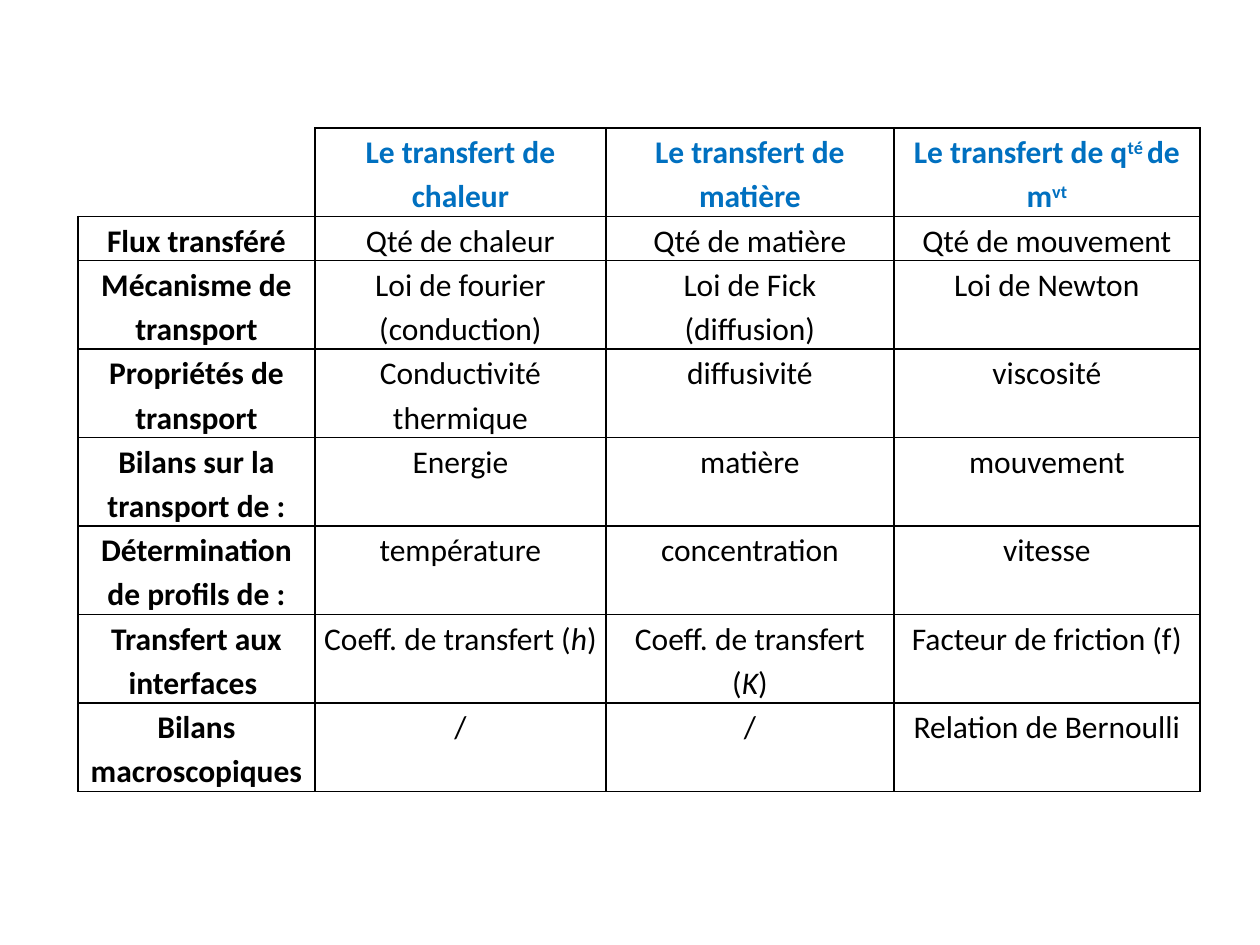
from dataclasses import dataclass

from pptx import Presentation
from pptx import util as u
from pptx.dml import color
from pptx.enum import text
from pptx.oxml import parse_xml
from pptx.oxml import ns

PX_PER_INCH = 126
BLANK_LAYOUT = 6


@dataclass(frozen=True)
class Theme:
    font: str = "Calibri"
    size: int = 18
    ink: str = "000000"
    heading: str = "0070C0"
    line_spacing: float = 1.15
    border_pt: int = 1
    cell_inset: int = 9


def px(length):
    return u.Emu(round(length * u.Inches(1) / PX_PER_INCH))


def add_span(para, words, *, theme, ink, bold=False, italic=False, raised=False):
    span = para.add_run()
    span.text = words
    font = span.font
    font.name, font.size = theme.font, u.Pt(theme.size)
    font.bold, font.italic = bold, italic
    font.color.rgb = color.RGBColor.from_string(ink)
    if raised:
        span._r.get_or_add_rPr().set("baseline", "30000")


class PageBuilder:
    def __init__(self, page, theme):
        self.page = page
        self.theme = theme

    def table(self, left, top, height, columns, row_heights, rows):
        """Draw rows of cells; the first row and first column are headings."""
        frame = self.page.shapes.add_table(
            len(rows), len(columns), px(left), px(top), px(sum(columns)), px(height))
        grid = frame.table
        grid.first_row = grid.horz_banding = False
        for column, width in zip(grid.columns, columns):
            column.width = px(width)
        for row, row_height in zip(grid.rows, row_heights):
            row.height = px(row_height)
        frame.height = px(height)
        for r, row in enumerate(rows):
            for c, content in enumerate(row):
                cell = grid.cell(r, c)
                self.cell(cell, content, bold=r == 0 or c == 0,
                          ink=self.theme.heading if r == 0 else self.theme.ink)
                self.borders(cell, "LRTB" if content else "RB")

    def cell(self, cell, content, **style):
        """Fill a cell with a string or a list of (words, format) spans."""
        cell.fill.background()
        cell.margin_left = cell.margin_right = px(self.theme.cell_inset)
        cell.margin_top = cell.margin_bottom = 0
        para = cell.text_frame.paragraphs[0]
        para.alignment = text.PP_ALIGN.CENTER
        para.line_spacing = self.theme.line_spacing
        spans = [(content, {})] if isinstance(content, str) else content
        for words, extra in spans:
            if words:
                add_span(para, words, theme=self.theme, **style, **extra)

    def borders(self, cell, visible):
        properties = cell._tc.get_or_add_tcPr()
        solid = f'<a:solidFill><a:srgbClr val="{self.theme.ink}"/></a:solidFill>'
        width = u.Pt(self.theme.border_pt)
        for position, side in enumerate("LRTB"):
            paint = solid if side in visible else "<a:noFill/>"
            properties.insert(position, parse_xml(
                f'<a:ln{side} {ns.nsdecls("a")} w="{width}">{paint}</a:ln{side}>'))


RAISED = {"raised": True}
ITALIC = {"italic": True}


def coefficient(symbol):
    return [("Coeff. de transfert (", {}), (symbol, ITALIC), (")", {})]


ROWS = [
    ["", "Le transfert de chaleur", "Le transfert de matière",
     [("Le transfert de q", {}), ("té ", RAISED), ("de m", {}), ("vt", RAISED)]],
    ["Flux transféré", "Qté de chaleur", "Qté de matière", "Qté de mouvement"],
    ["Mécanisme de transport", "Loi de fourier (conduction)",
     "Loi de Fick (diffusion)", "Loi de Newton"],
    ["Propriétés de transport", "Conductivité thermique", "diffusivité", "viscosité"],
    ["Bilans sur la transport de :", "Energie", "matière", "mouvement"],
    ["Détermination de profils de :", "température", "concentration", "vitesse"],
    ["Transfert aux interfaces ", coefficient("h"), coefficient("K"),
     "Facteur de friction (f)"],
    ["Bilans macroscopiques", "/", "/", "Relation de Bernoulli"],
]


def main():
    deck = Presentation()
    deck.slide_width, deck.slide_height = u.Inches(10), u.Inches(7.5)
    page = deck.slides.add_slide(deck.slide_layouts[BLANK_LAYOUT])
    two_lines, one_line = 63, 32
    PageBuilder(page, Theme()).table(
        left=78, top=128, height=651, columns=[237, 291, 288, 306],
        row_heights=[two_lines, one_line] + [two_lines] * 6, rows=ROWS)
    deck.save("out.pptx")


if __name__ == "__main__":
    main()
